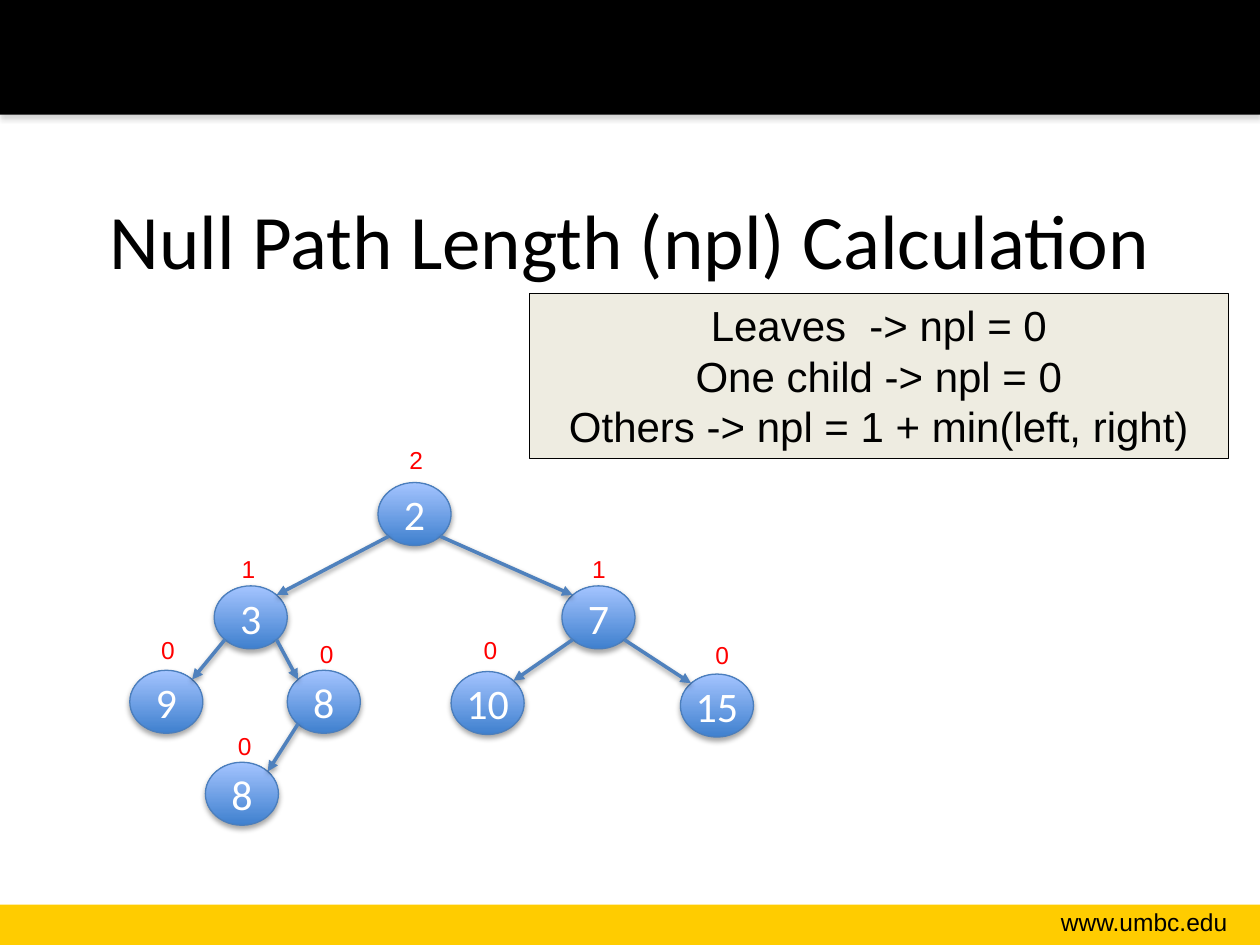
from lxml.etree import SubElement
from pptx import Presentation
from pptx.dml.color import RGBColor
from pptx.enum.shapes import MSO_CONNECTOR, MSO_SHAPE
from pptx.enum.text import MSO_ANCHOR, PP_ALIGN
from pptx.oxml.ns import qn
from pptx.util import Inches, Pt

BLACK = RGBColor(0x00, 0x00, 0x00)
WHITE = RGBColor(0xFF, 0xFF, 0xFF)
GOLD = RGBColor(0xFF, 0xCC, 0x00)
BEIGE = RGBColor(0xEE, 0xEC, 0xE1)
RED = RGBColor(0xFF, 0x00, 0x00)
GRAY = RGBColor(0x80, 0x80, 0x80)
NODE_DARK = RGBColor(0x3F, 0x80, 0xCE)
NODE_LIGHT = RGBColor(0xA4, 0xC4, 0xFF)
NODE_LINE = RGBColor(0x4B, 0x7E, 0xBC)
EDGE = RGBColor(0x4F, 0x81, 0xBD)

NODE_W, NODE_H = 0.58, 0.5
LABEL_W, LABEL_H = 0.29, 0.34
DIAGONAL = 0.5 ** 0.5 / 2  # share of an ellipse's size from centre to its 45° point


def add_shadow(sp, color, opacity, distance):
    effects = SubElement(sp._element.spPr, qn("a:effectLst"))
    shadow = SubElement(effects, qn("a:outerShdw"), blurRad=str(Pt(3.1)),
                        dist=str(Pt(distance)), dir="5400000", rotWithShape="0")
    rgb = SubElement(shadow, qn("a:srgbClr"), val=str(color))
    SubElement(rgb, qn("a:alpha"), val=str(opacity * 1000))


def write(sp, text, font, size, color, align, anchor=MSO_ANCHOR.TOP, wrap=True):
    tf = sp.text_frame
    tf.text = text
    tf.word_wrap = wrap
    tf.vertical_anchor = anchor
    for p in tf.paragraphs:
        p.alignment = align
        for r in p.runs:
            r.font.name = font
            r.font.size = Pt(size)
            r.font.color.rgb = color


prs = Presentation()
prs.slide_width, prs.slide_height = Inches(10), Inches(7.5)
s = prs.slides.add_slide(prs.slide_layouts[5])

# Footer and header bands
for top, height, color in [(7.18, 0.32, GOLD), (0, 0.91, BLACK)]:
    band = s.shapes.add_shape(MSO_SHAPE.RECTANGLE, 0, Inches(top),
                              prs.slide_width, Inches(height))
    band.fill.solid()
    band.fill.fore_color.rgb = color
    band.line.fill.background()
    if color == BLACK:
        add_shadow(band, GRAY, 35, 1.8)
    else:
        band.shadow.inherit = False

site = s.shapes.add_textbox(Inches(7.85), Inches(7.15), Inches(1.99), Inches(0.34))
write(site, "www.umbc.edu", "Arial", 14, BLACK, PP_ALIGN.RIGHT)

# Title
title = s.shapes.title
title.left, title.top = Inches(0.5), Inches(1.27)
title.width, title.height = Inches(9), Inches(1.25)
write(title, "Null Path Length (npl) Calculation", "Calibri", 44, BLACK,
      PP_ALIGN.CENTER, MSO_ANCHOR.MIDDLE)

# Rules box
rules = s.shapes.add_shape(MSO_SHAPE.RECTANGLE, Inches(4.2), Inches(2.33),
                           Inches(5.55), Inches(1.31))
rules.fill.solid()
rules.fill.fore_color.rgb = BEIGE
rules.line.color.rgb = BLACK
rules.line.width = Pt(0.75)
rules.shadow.inherit = False
write(rules, "Leaves  -> npl = 0\nOne child -> npl = 0\n"
      "Others -> npl = 1 + min(left, right)", "Arial", 24, BLACK, PP_ALIGN.CENTER)

# Tree: key, left, top, npl, npl left, npl top, parent index
nodes = [
    ("2", 3.00, 3.83, "2", 3.15, 3.48, None),
    ("3", 1.70, 4.65, "1", 1.82, 4.35, 0),
    ("7", 4.46, 4.65, "1", 4.60, 4.35, 0),
    ("9", 1.03, 5.32, "0", 1.18, 4.99, 1),
    ("8", 2.28, 5.32, "0", 2.44, 5.02, 1),
    ("10", 3.58, 5.33, "0", 3.74, 4.99, 2),
    ("15", 5.40, 5.35, "0", 5.58, 5.03, 2),
    ("8", 1.63, 6.05, "0", 1.79, 5.75, 4),
]
dx, dy = NODE_W * DIAGONAL, NODE_H * DIAGONAL

for key, left, top, npl, npl_left, npl_top, parent in nodes:
    # Node
    node = s.shapes.add_shape(MSO_SHAPE.OVAL, Inches(left), Inches(top),
                              Inches(NODE_W), Inches(NODE_H))
    node.fill.gradient()
    node.fill.gradient_angle = 90
    for stop, color in zip(node.fill.gradient_stops, (NODE_DARK, NODE_LIGHT)):
        stop.color.rgb = color
    node.line.color.rgb = NODE_LINE
    node.line.width = Pt(0.75)
    add_shadow(node, BLACK, 35, 1.8)
    write(node, key, "Calibri", 24, WHITE, PP_ALIGN.CENTER, MSO_ANCHOR.MIDDLE, False)

    # Null path length
    label = s.shapes.add_textbox(Inches(npl_left), Inches(npl_top),
                                 Inches(LABEL_W), Inches(LABEL_H))
    write(label, npl, "Arial", 14, RED, PP_ALIGN.LEFT)

    # Arrow from the parent's lower diagonal to the child's upper diagonal
    if parent is None:
        continue
    parent_left, parent_top = nodes[parent][1:3]
    side = 1 if left > parent_left else -1
    edge = s.shapes.add_connector(
        MSO_CONNECTOR.STRAIGHT,
        Inches(parent_left + NODE_W / 2 + side * dx), Inches(parent_top + NODE_H / 2 + dy),
        Inches(left + NODE_W / 2 - side * dx), Inches(top + NODE_H / 2 - dy))
    edge.line.color.rgb = EDGE
    edge.line.width = Pt(2)
    SubElement(edge.line._get_or_add_ln(), qn("a:tailEnd"), type="triangle")
    add_shadow(edge, BLACK, 38, 1.6)

prs.save("out.pptx")
